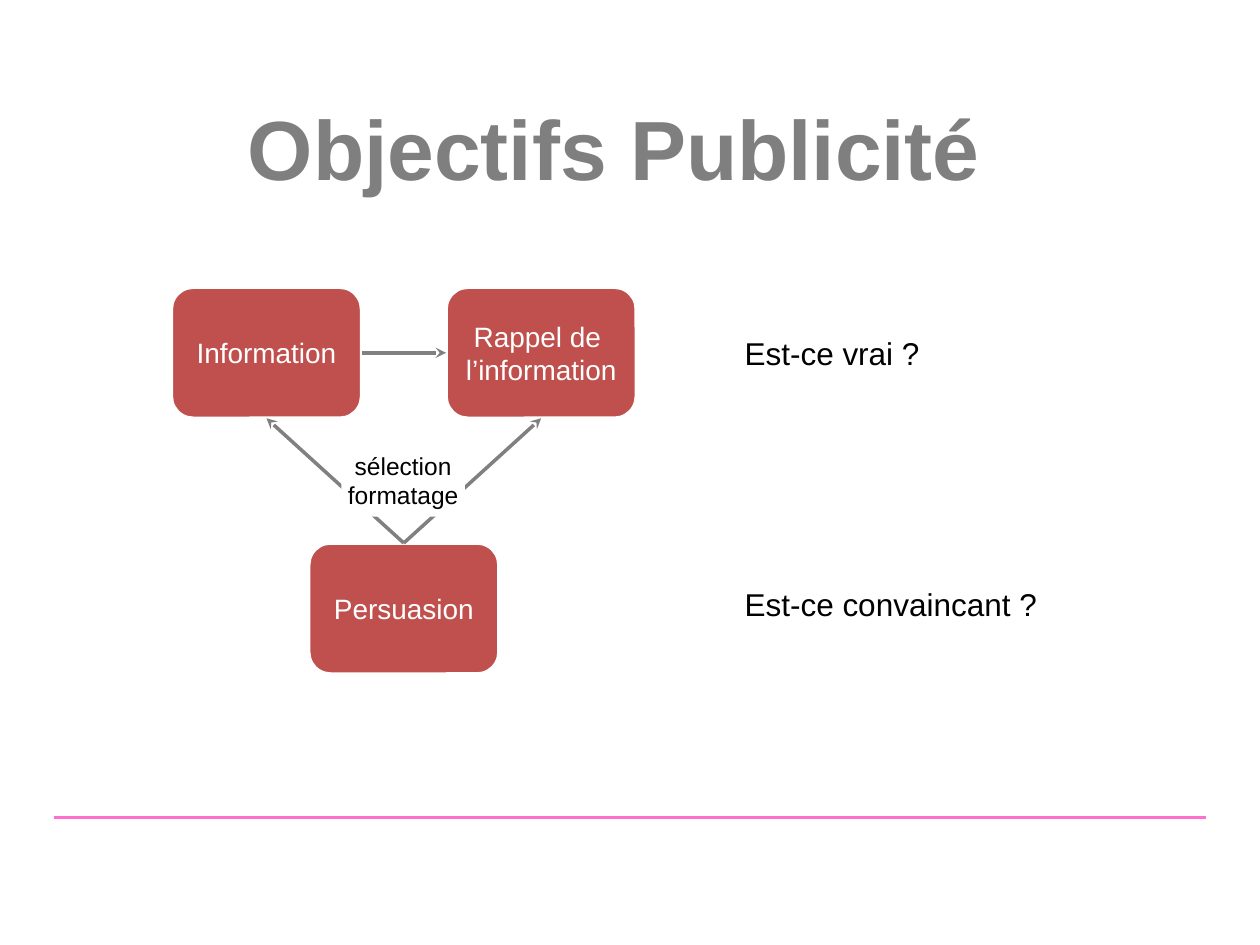
"""Build the slide on the aims of advertising."""
import typing

import lxml.etree
import pptx
import pptx.dml.color
import pptx.enum.shapes
import pptx.enum.text
import pptx.oxml.ns
import pptx.util

Inches = pptx.util.Inches
Pt = pptx.util.Pt
RGB = pptx.dml.color.RGBColor
Align = pptx.enum.text.PP_ALIGN
Anchor = pptx.enum.text.MSO_ANCHOR
Kind = pptx.enum.shapes.MSO_SHAPE
qn = pptx.oxml.ns.qn

WHITE = RGB(0xFF, 0xFF, 0xFF)
BLACK = RGB(0, 0, 0)
RED = RGB(0xC0, 0x50, 0x4D)
GRAY = RGB(0x80, 0x80, 0x80)
TITLE = RGB(0x7F, 0x7F, 0x7F)
PINK = RGB(0xFF, 0x6F, 0xCF)
WIDE, HIGH = 1.51, 1.04
TOP, BOTTOM, LEFT, RIGHT = 0, 2, 1, 3


class Box(typing.NamedTuple):
    name: str
    text: str
    left: float
    top: float


class Link(typing.NamedTuple):
    start: str
    out: int
    end: str
    into: int


class Note(typing.NamedTuple):
    text: str
    left: float
    top: float
    width: float


BOXES = [
    Box("info", "Information", 1.36, 2.28),
    Box("sway", "Persuasion", 2.45, 4.31),
    Box("recall", "Rappel de \nl’information", 3.54, 2.28),
]
LINKS = [
    Link("info", RIGHT, "recall", LEFT),
    Link("sway", TOP, "info", BOTTOM),
    Link("sway", TOP, "recall", BOTTOM),
]
NOTES = [
    Note("Est-ce vrai ?", 5.86, 2.6, 1.5),
    Note("Est-ce convaincant ?", 5.86, 4.59, 2.44),
]


def write(shape, text: str, size: int, color: RGB, align: Align, bold: bool = False) -> None:
    """Put text in a shape and format its runs."""
    frame = shape.text_frame
    frame.text = text
    for para in frame.paragraphs:
        para.alignment = align
        for run in para.runs:
            run.font.name = "Arial"
            run.font.size = Pt(size)
            run.font.bold = bold
            run.font.color.rgb = color


def inset(frame) -> None:
    """Give a text frame the same small margin all round."""
    frame.margin_left = frame.margin_right = Inches(0.05)
    frame.margin_top = frame.margin_bottom = Inches(0.05)


def add_box(slide, box: Box):
    """Draw a red rounded box."""
    shape = slide.shapes.add_shape(
        Kind.ROUNDED_RECTANGLE, Inches(box.left), Inches(box.top), Inches(WIDE), Inches(HIGH)
    )
    shape.shadow.inherit = False
    shape.fill.solid()
    shape.fill.fore_color.rgb = RED
    shape.line.color.rgb = WHITE
    shape.line.width = Pt(2)
    inset(shape.text_frame)
    shape.text_frame.vertical_anchor = Anchor.MIDDLE
    write(shape, box.text, 16, WHITE, Align.CENTER)
    return shape


def add_line(slide, color: RGB, x1: float = 0, y1: float = 0, x2: float = 0, y2: float = 0):
    """Draw a straight line without a shadow."""
    line = slide.shapes.add_connector(
        pptx.enum.shapes.MSO_CONNECTOR.STRAIGHT, Inches(x1), Inches(y1), Inches(x2), Inches(y2)
    )
    line.line.color.rgb = color
    line.line.width = Pt(2)
    lxml.etree.SubElement(line._element.spPr, qn("a:effectLst"))
    return line


def add_link(slide, link: Link, shapes: dict) -> None:
    """Join two boxes with an arrow."""
    line = add_line(slide, GRAY)
    line.begin_connect(shapes[link.start], link.out)
    line.end_connect(shapes[link.end], link.into)
    lxml.etree.SubElement(line.line._get_or_add_ln(), qn("a:tailEnd"), type="stealth")


def add_note(slide, note: Note, size: int, high: float, align: Align):
    """Draw a text box that does not wrap."""
    shape = slide.shapes.add_textbox(
        Inches(note.left), Inches(note.top), Inches(note.width), Inches(high)
    )
    inset(shape.text_frame)
    shape.text_frame.word_wrap = False
    write(shape, note.text, size, BLACK, align)
    return shape


def main() -> None:
    """Build and save the slide."""
    deck = pptx.Presentation()
    deck.slide_width, deck.slide_height = Inches(10), Inches(7.5)
    slide = deck.slides.add_slide(deck.slide_layouts[5])
    add_line(slide, PINK, 0.43, 6.49, 9.57, 6.49)
    title = slide.shapes.title
    title.left, title.top = Inches(1.36), Inches(0.71)
    title.width, title.height = Inches(7.03), Inches(0.91)
    title.text_frame.vertical_anchor = Anchor.MIDDLE
    write(title, "Objectifs Publicité", 48, TITLE, Align.CENTER, True)
    shapes = {box.name: add_box(slide, box) for box in BOXES}
    for link in LINKS:
        add_link(slide, link, shapes)
    for note in NOTES:
        add_note(slide, note, 18, 0.4, Align.LEFT)
    label = add_note(
        slide, Note("sélection\nformatage", 2.71, 3.53, 0.98), 14, 0.57, Align.CENTER
    )
    label.fill.solid()
    label.fill.fore_color.rgb = WHITE
    deck.save("out.pptx")


if __name__ == "__main__":
    main()
